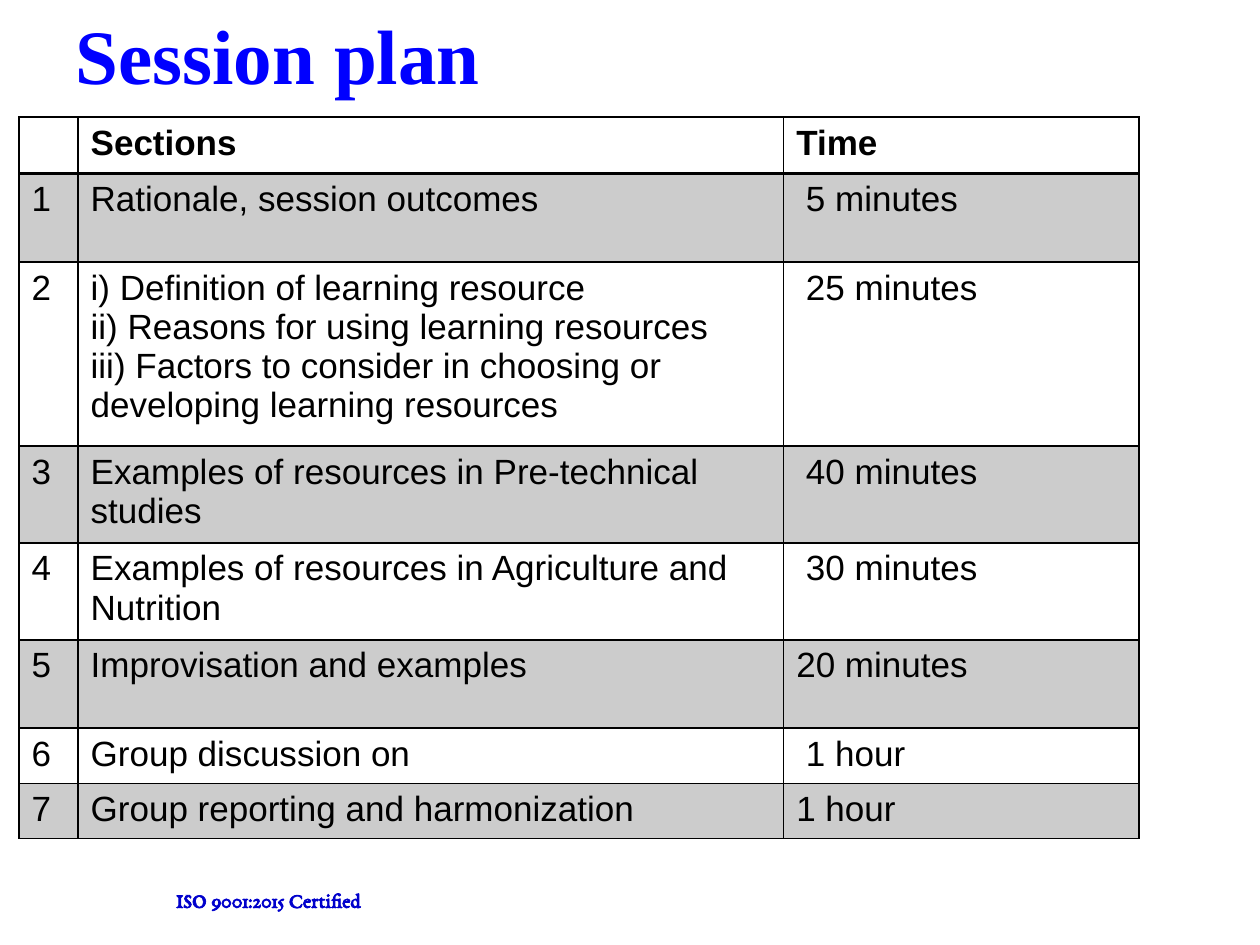
from lxml import etree
from pptx import Presentation
from pptx.dml.color import RGBColor
from pptx.enum.text import MSO_ANCHOR, MSO_AUTO_SIZE
from pptx.oxml.ns import qn
from pptx.util import Inches, Pt

MIDDLE = MSO_ANCHOR.MIDDLE
TOP = MSO_ANCHOR.TOP
GROW = MSO_AUTO_SIZE.SHAPE_TO_FIT_TEXT
NO_FIT = MSO_AUTO_SIZE.NONE

BLACK = RGBColor(0x00, 0x00, 0x00)
WHITE = RGBColor(0xFF, 0xFF, 0xFF)
BAND_GREY = RGBColor(0xCC, 0xCC, 0xCC)
TITLE_BLUE = RGBColor(0x00, 0x00, 0xFF)
FOOTER_BLUE = RGBColor(0x00, 0x00, 0xCC)

COLUMN_WIDTHS = [0.47, 5.6, 2.82]
ROW_HEIGHTS = [0.45, 0.7, 1.46, 0.77, 0.77, 0.7, 0.44, 0.42]
SESSIONS = [
    ("", "Sections", "Time"),
    ("1", "Rationale, session outcomes", " 5 minutes"),
    ("2", "i) Definition of learning resource\n"
          "ii) Reasons for using learning resources\n"
          "iii) Factors to consider in choosing or developing learning resources",
     " 25 minutes"),
    ("3", "Examples of resources in Pre-technical studies", " 40 minutes"),
    ("4", "Examples of resources in Agriculture and Nutrition", " 30 minutes"),
    ("5", "Improvisation and examples", "20 minutes"),
    ("6", "Group discussion on", " 1 hour"),
    ("7", "Group reporting and harmonization", "1 hour"),
]


def style_font(font, name, size, color, bold):
    font.name = name
    font.size = Pt(size)
    font.color.rgb = color
    font.bold = bold


def set_borders(cell, bottom_width, top_width):
    widths = {"a:lnL": 1, "a:lnR": 1, "a:lnT": top_width, "a:lnB": bottom_width}
    properties = cell._tc.get_or_add_tcPr()
    for position, (tag, width) in enumerate(widths.items()):
        line = etree.Element(qn(tag), w=str(Pt(width)))
        fill = etree.SubElement(line, qn("a:solidFill"))
        etree.SubElement(fill, qn("a:srgbClr"), val=str(BLACK))
        properties.insert(position, line)


deck = Presentation()
deck.slide_width = Inches(10)
deck.slide_height = Inches(7.5)
page = deck.slides.add_slide(deck.slide_layouts[6])

# Footer and title
for text, area, name, size, color, anchor, fit in [
    ("ISO 9001:2015 Certified", (1.3, 6.99, 5.19, 0.3),
     "EB Garamond", 12, FOOTER_BLUE, TOP, GROW),
    ("Session plan", (0.5, 0.3, 6.09, 0.25),
     "Times New Roman", 44, TITLE_BLUE, MIDDLE, NO_FIT),
]:
    box = page.shapes.add_textbox(*[Inches(length) for length in area])
    frame = box.text_frame
    frame.word_wrap = True
    frame.auto_size = fit
    frame.vertical_anchor = anchor
    frame.text = text
    style_font(frame.paragraphs[0].font, name, size, color, True)

# Session table
table = page.shapes.add_table(
    len(SESSIONS), len(COLUMN_WIDTHS), Inches(0.15), Inches(0.93),
    Inches(sum(COLUMN_WIDTHS)), Inches(sum(ROW_HEIGHTS))).table
table.first_row = False
table.horz_banding = False
for column, width in zip(table.columns, COLUMN_WIDTHS):
    column.width = Inches(width)
for row, height in zip(table.rows, ROW_HEIGHTS):
    row.height = Inches(height)

# Cells: bold header over a thick rule, odd rows shaded
for row_number, texts in enumerate(SESSIONS):
    for column_number, text in enumerate(texts):
        cell = table.cell(row_number, column_number)
        cell.text = text
        cell.fill.solid()
        cell.fill.fore_color.rgb = BAND_GREY if row_number % 2 else WHITE
        set_borders(cell, bottom_width=2 if row_number == 0 else 1,
                    top_width=2 if row_number == 1 else 1)
        for para in cell.text_frame.paragraphs:
            style_font(para.font, "Arial", 20, BLACK, row_number == 0)

deck.save("out.pptx")
